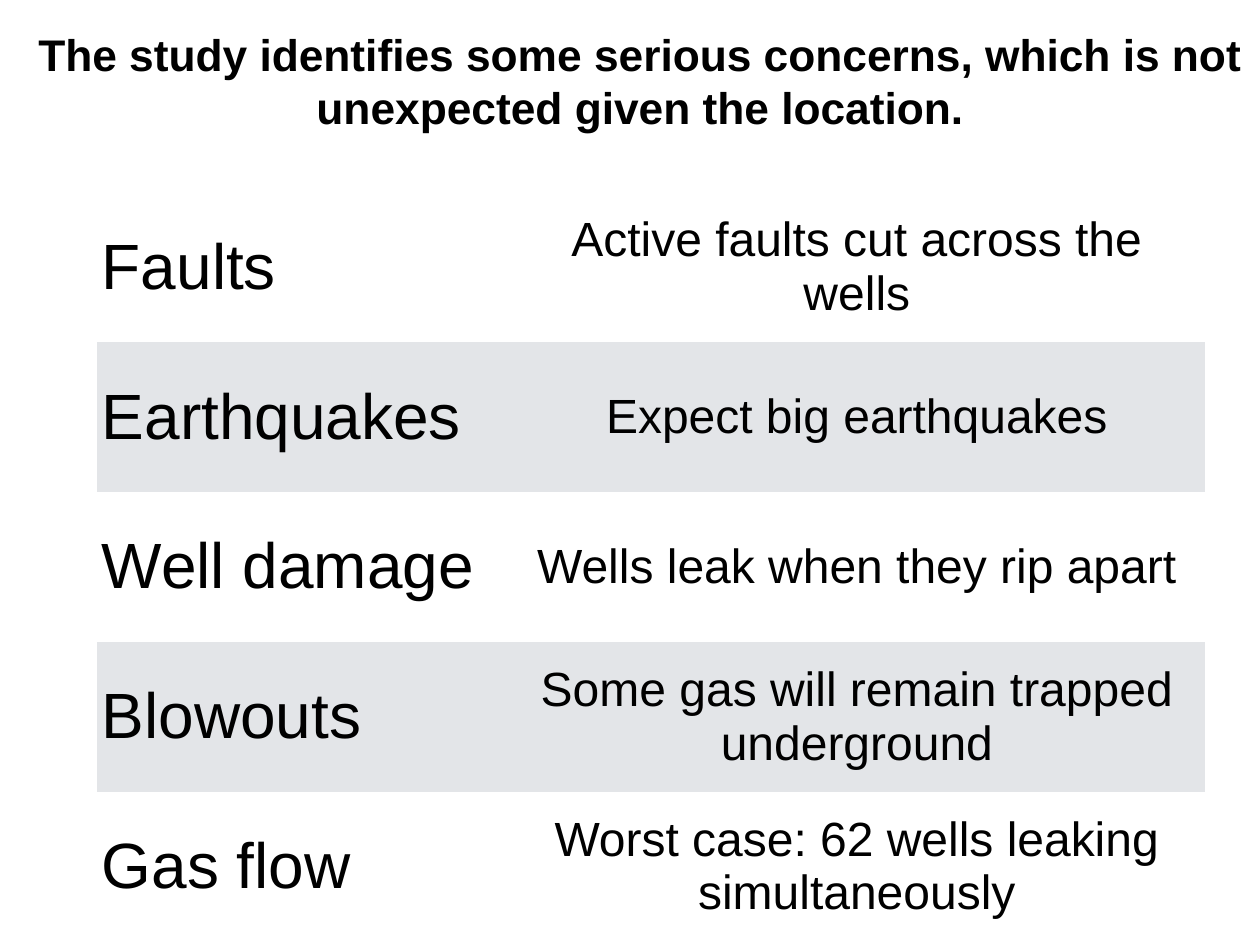
from pptx import Presentation
from pptx import util as u
from pptx.dml.color import RGBColor
from pptx.enum import text

COLORS = {"ink": "000000", "plain": "FFFFFF", "band": "E3E5E8"}
NO_STYLE_NO_GRID = "{2D5ABB26-0587-4C30-8999-92F81FD0307C}"
CONCERNS = [
    ("Faults", "Active faults cut across the wells"),
    ("Earthquakes", "Expect big earthquakes"),
    ("Well damage", "Wells leak when they rip apart"),
    ("Blowouts", "Some gas will remain trapped underground"),
    ("Gas flow", "Worst case: 62 wells leaking simultaneously"),
]
COLUMNS = [
    {"width": 4.65, "size": 52, "align": text.PP_ALIGN.LEFT},
    {"width": 7.86, "size": 39, "align": text.PP_ALIGN.CENTER},
]


def write(tf, words, align, size, bold=False):
    p = tf.paragraphs[0]
    p.alignment = align
    r = p.add_run()
    r.text = words
    for name, value in {"name": "Arial", "size": u.Pt(size), "bold": bold}.items():
        setattr(r.font, name, value)
    r.font.color.rgb = RGBColor.from_string(COLORS["ink"])


prs = Presentation()
prs.slide_width, prs.slide_height = u.Inches(14.22), u.Inches(10.67)
s = prs.slides.add_slide(prs.slide_layouts[5])

# Title
title = s.shapes.title
box = {"left": 0.23, "top": 0.25, "width": 13.99, "height": 1.31}
for name, value in box.items():
    setattr(title, name, u.Inches(value))
tf = title.text_frame
frame = {"word_wrap": True, "auto_size": text.MSO_AUTO_SIZE.NONE,
         "vertical_anchor": text.MSO_ANCHOR.MIDDLE}
for name, value in frame.items():
    setattr(tf, name, value)
write(tf, "The study identifies some serious concerns, which is not "
      "unexpected given the location.", text.PP_ALIGN.CENTER, 36, bold=True)

# Table of concerns
table = s.shapes.add_table(len(CONCERNS), len(COLUMNS), u.Inches(1.09), u.Inches(2.17),
                           u.Inches(12.51), u.Inches(8.46)).table
table.first_row = table.horz_banding = False
table._tbl.tblPr[0].text = NO_STYLE_NO_GRID
for column, style in zip(table.columns, COLUMNS):
    column.width = u.Inches(style["width"])

# Cells, with every second row shaded
for i, concern in enumerate(CONCERNS):
    for j, (words, style) in enumerate(zip(concern, COLUMNS)):
        cell = table.cell(i, j)
        for side in ("left", "top", "right", "bottom"):
            setattr(cell, f"margin_{side}", u.Inches(0.06))
        cell.vertical_anchor = text.MSO_ANCHOR.MIDDLE
        cell.fill.solid()
        cell.fill.fore_color.rgb = RGBColor.from_string(COLORS["band" if i % 2 else "plain"])
        write(cell.text_frame, words, style["align"], style["size"])

prs.save("out.pptx")
